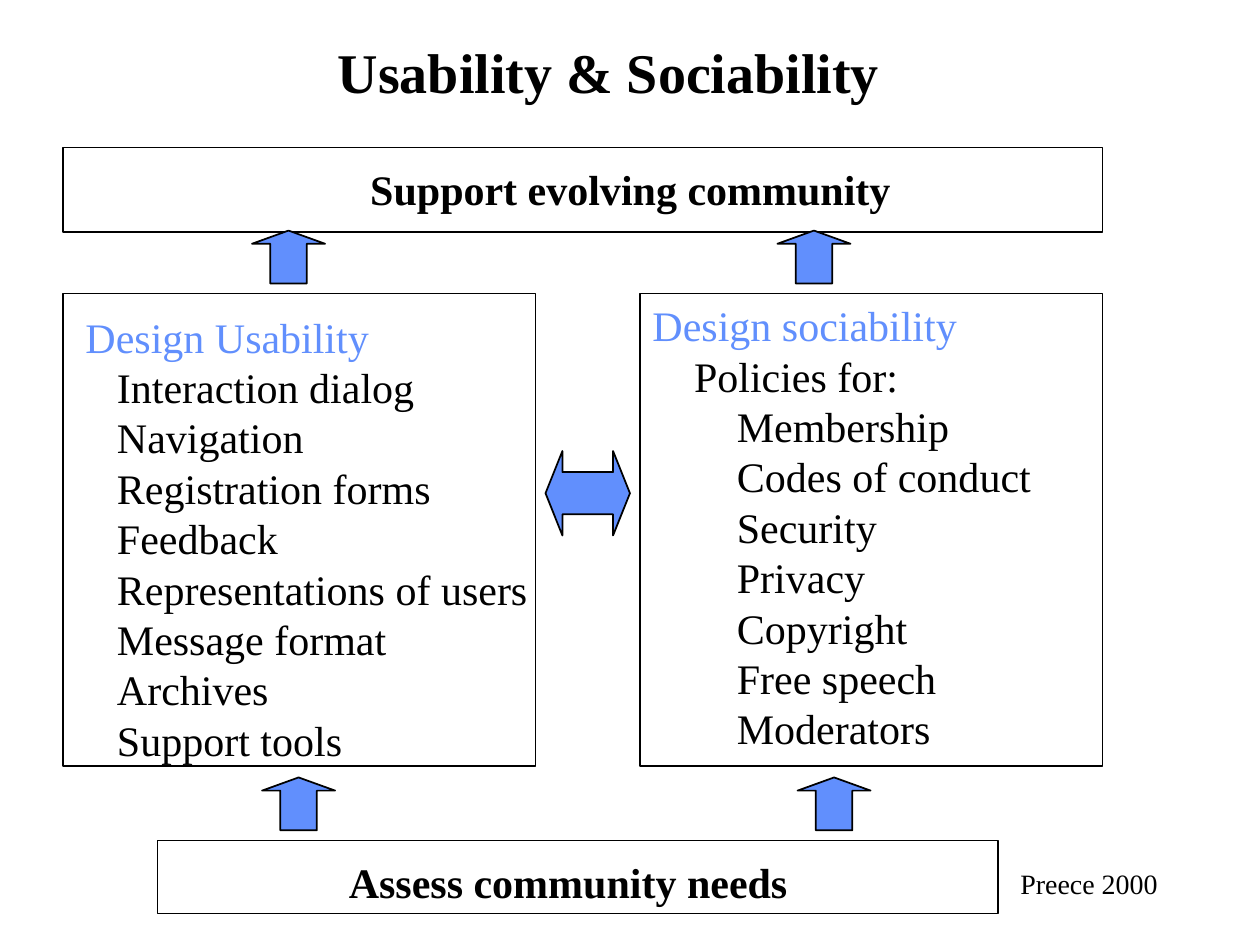
"""Build the Usability & Sociability slide."""
from dataclasses import dataclass

from pptx import Presentation
from pptx.dml.color import RGBColor
from pptx.enum.shapes import MSO_SHAPE
from pptx.enum.text import MSO_ANCHOR, MSO_AUTO_SIZE, PP_ALIGN
from pptx.util import Inches, Pt


@dataclass(frozen=True)
class Theme:
    font: str = "Times New Roman"
    ink: RGBColor = RGBColor(0, 0, 0)
    blue: RGBColor = RGBColor(0x61, 0x8F, 0xFD)
    title: int = 32
    body: int = 24
    note: int = 16
    lead: float = 1.2


THEME = Theme()
TITLE = "Usability & Sociability"
FRAMES = [
    (0.5, 1.17, 8.25, 0.67),
    (0.5, 2.33, 3.75, 3.75),
    (5.08, 2.33, 3.67, 3.75),
    (1.25, 6.67, 6.67, 0.58),
]
LABELS = [
    ((1.42, 1.25, 6.5, 0.5), "Support evolving community", 1.42, THEME.body, True),
    ((0.75, 6.75, 6, 0.5), "Assess community needs", 1.92, THEME.body, True),
    ((8, 6.83, 1.83, 0.37), "Preece 2000", 0, THEME.note, False),
]
LISTS = [
    ((0.58, 2.42, 3.92, 4.29), "Design Usability", [
        (0.25, ["Interaction dialog", "Navigation", "Registration forms",
                "Feedback", "Representations of users", "Message format",
                "Archives", "Support tools"]),
    ]),
    ((5.08, 2.33, 3.92, 3.69), "Design sociability", [
        (0.33, ["Policies for:"]),
        (0.67, ["Membership", "Codes of conduct", "Security", "Privacy",
                "Copyright", "Free speech", "Moderators"]),
    ]),
]
LINK = (4.33, 3.58, 0.67, 0.67)
RISES = [(2, 1.83), (6.17, 1.83), (6.33, 6.17), (2.08, 6.17)]
RISE = (0.58, 0.42)


def place(shape, box):
    shape.left, shape.top, shape.width, shape.height = map(Inches, box)


def write(frame, rows, size, bold=False):
    frame.word_wrap = True
    frame.auto_size = MSO_AUTO_SIZE.NONE
    frame.vertical_anchor = MSO_ANCHOR.TOP
    frame.text = "\n".join(text for text, _, _ in rows)
    for para, (_, inset, color) in zip(frame.paragraphs, rows):
        para.alignment = PP_ALIGN.LEFT
        para.line_spacing = Pt(size * THEME.lead)
        para.space_before = Pt(0)
        props = para._p.get_or_add_pPr()
        props.set("marL", str(Inches(inset)))
        props.set("indent", "0")
        for run in para.runs:
            font = run.font
            font.name, font.size, font.bold = THEME.font, Pt(size), bold
            font.color.rgb = color


def draw(slide, kind, box, fill=None, adjust=()):
    shape = slide.shapes.add_shape(kind, *map(Inches, box))
    shape.shadow.inherit = False
    shape.line.color.rgb = THEME.ink
    shape.line.width = Pt(1)
    if fill is None:
        shape.fill.background()
    else:
        shape.fill.solid()
        shape.fill.fore_color.rgb = fill
    for i, value in enumerate(adjust):
        shape.adjustments[i] = value


def note(slide, box, rows, size, bold=False):
    text = slide.shapes.add_textbox(*map(Inches, box))
    write(text.text_frame, rows, size, bold)


def main():
    deck = Presentation()
    deck.slide_width, deck.slide_height = Inches(10), Inches(7.5)
    slide = deck.slides.add_slide(deck.slide_layouts[5])
    head = slide.shapes.title
    place(head, (2.58, 0.25, 4.75, 0.63))
    write(head.text_frame, [(TITLE, 0, THEME.ink)], THEME.title, True)

    for box in FRAMES:
        draw(slide, MSO_SHAPE.RECTANGLE, box)
    for box, text, inset, size, bold in LABELS:
        note(slide, box, [(text, inset, THEME.ink)], size, bold)
    for box, topic, groups in LISTS:
        rows = [(topic, 0, THEME.blue)]
        rows += [(item, inset, THEME.ink) for inset, items in groups for item in items]
        note(slide, box, rows, THEME.body)
    draw(slide, MSO_SHAPE.LEFT_RIGHT_ARROW, LINK, THEME.blue, (0.5, 0.2))
    for spot in RISES:
        draw(slide, MSO_SHAPE.UP_ARROW, spot + RISE, THEME.blue, (0.5, 0.25))
    deck.save("out.pptx")


if __name__ == "__main__":
    main()
